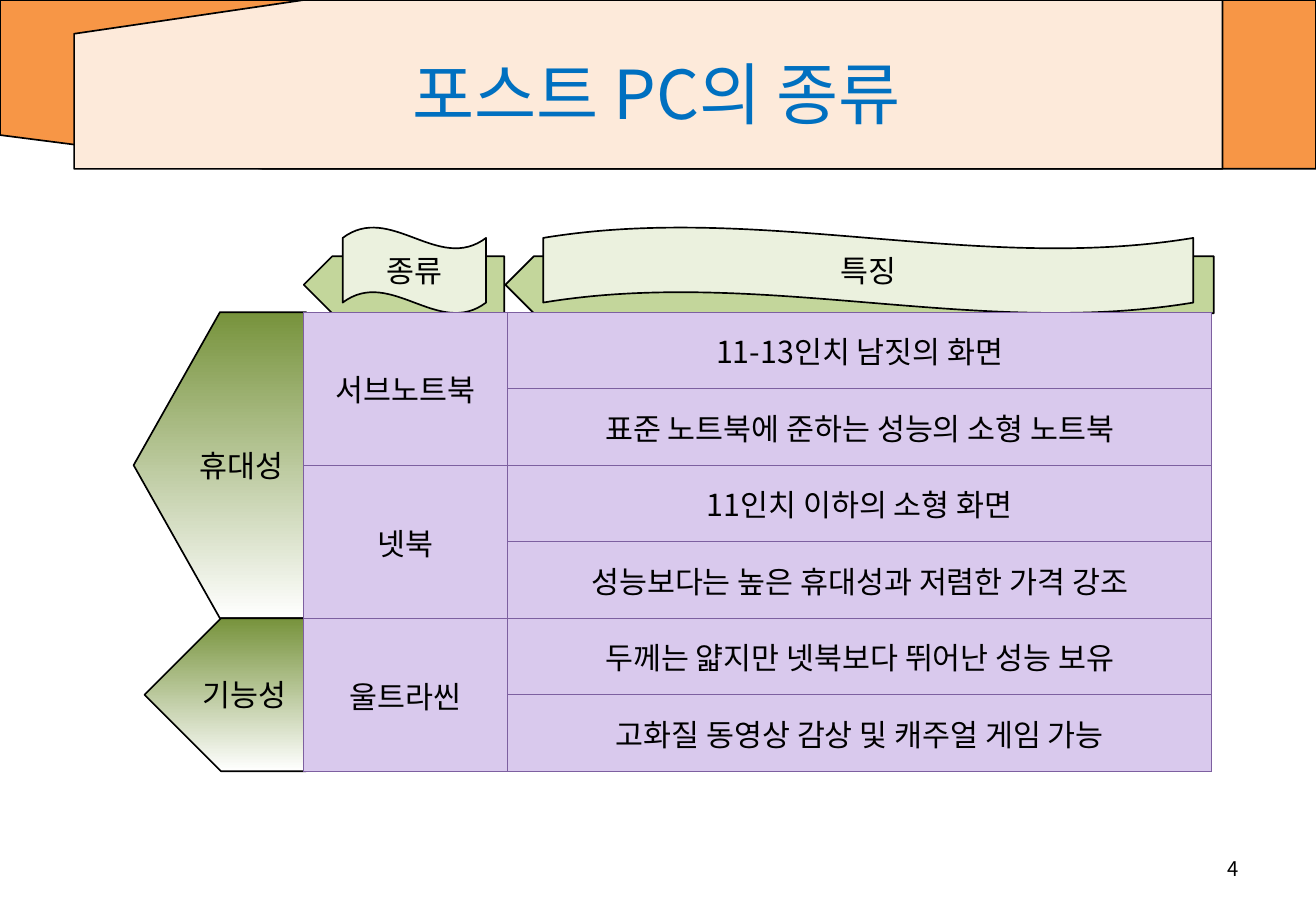
from lxml.etree import SubElement
from pptx import Presentation
from pptx.dml.color import RGBColor
from pptx.enum.shapes import MSO_SHAPE
from pptx.enum.text import MSO_ANCHOR, PP_ALIGN
from pptx.oxml.ns import qn
from pptx.util import Inches, Pt

FONT = "Noto Sans CJK KR"
ROW_HEIGHT = 0.63
TABLE_LEFT, TABLE_TOP = 2.5, 2.57
KINDS = [
    ("서브노트북", ["11-13인치 남짓의 화면", "표준 노트북에 준하는 성능의 소형 노트북"]),
    ("넷북", ["11인치 이하의 소형 화면", "성능보다는 높은 휴대성과 저렴한 가격 강조"]),
    ("울트라씬", ["두께는 얇지만 넷북보다 뛰어난 성능 보유", "고화질 동영상 감상 및 캐주얼 게임 가능"]),
]
HEADERS = [("종류", (2.5, 1.65), (2.82, 1.18)), ("특징", (4.16, 5.83), (4.47, 5.35))]
QUALITIES = [("휴대성", 1.1, 1.42, 0, 4), ("기능성", 1.19, 1.33, 4, 2)]


def color(hex_value):
    return RGBColor.from_string(hex_value)


class SlideBuilder:
    """Draws styled elements on the current slide."""

    def __init__(self, slide):
        self.slide = slide
        self.shapes = slide.shapes

    def put_text(self, frame, text, size=18, ink="000000", align=PP_ALIGN.CENTER):
        frame.word_wrap = True
        frame.vertical_anchor = MSO_ANCHOR.MIDDLE
        paragraph = frame.paragraphs[0]
        paragraph.alignment = align
        run = paragraph.add_run()
        run.text = text
        for key, value in {"name": FONT, "size": Pt(size), "bold": False}.items():
            setattr(run.font, key, value)
        run.font.color.rgb = color(ink)
        SubElement(run.font._element, qn("a:ea"), typeface=FONT)

    def title(self, text, box):
        title = self.shapes.title
        for key, value in zip(("left", "top", "width", "height"), box):
            setattr(title, key, Inches(value))
        self.put_text(title.text_frame, text, 40, "0070C0")
        self.shapes._spTree.append(title._element)

    def label(self, text, box, size, align):
        label = self.shapes.add_textbox(*map(Inches, box))
        self.put_text(label.text_frame, text, size, align=align)

    def shape(self, preset, box, fills, text=None, flip=None):
        shape = self.shapes.add_shape(preset, *map(Inches, box))
        shape.shadow.inherit = False
        if len(fills) == 1:
            shape.fill.solid()
            shape.fill.fore_color.rgb = color(fills[0])
        else:
            shape.fill.gradient()
            shape.fill.gradient_angle = 270
            for stop, fill in zip(shape.fill.gradient_stops, fills):
                stop.color.rgb = color(fill)
        shape.line.color.rgb = color("000000")
        shape.line.width = Pt(1)
        if flip:
            shape._element.spPr.find(qn("a:xfrm")).set(flip, "1")
        if text:
            self.put_text(shape.text_frame, text)

    def cell_style(self, cell, fill, border):
        properties = cell._tc.get_or_add_tcPr()
        for side in ("lnL", "lnR", "lnT", "lnB"):
            edge = SubElement(properties, qn(f"a:{side}"), w=str(Pt(0.75)))
            SubElement(SubElement(edge, qn("a:solidFill")), qn("a:srgbClr"), val=border)
        cell.fill.solid()
        cell.fill.fore_color.rgb = color(fill)

    def table(self, groups, left, top, widths, row_height):
        row_count = sum(len(features) for _, features in groups)
        table = self.shapes.add_table(
            row_count, len(widths), Inches(left), Inches(top),
            Inches(sum(widths)), Inches(row_height * row_count)).table
        table.first_row = table.horz_banding = False
        for column, width in zip(table.columns, widths):
            column.width = Inches(width)
        for cell in table.iter_cells():
            self.cell_style(cell, "D9C9ED", "7D60A0")
        row = 0
        for kind, features in groups:
            kind_cell = table.cell(row, 0)
            kind_cell.merge(table.cell(row + len(features) - 1, 0))
            self.cell_text(kind_cell, kind)
            for feature in features:
                self.cell_text(table.cell(row, 1), feature)
                row += 1

    def cell_text(self, cell, text):
        self.put_text(cell.text_frame, text)
        cell.vertical_anchor = MSO_ANCHOR.MIDDLE


def main():
    presentation = Presentation()
    presentation.slide_width = Inches(10.83)
    presentation.slide_height = Inches(7.5)
    builder = SlideBuilder(presentation.slides.add_slide(presentation.slide_layouts[5]))

    card = MSO_SHAPE.FLOWCHART_CARD
    builder.shape(card, (0, 0, 10.83, 1.39), ["F79646"], flip="flipV")
    builder.shape(card, (0.61, 0, 9.45, 1.39), ["FDEADA"])
    builder.title("포스트 PC의 종류", (0.53, 0.14, 9.75, 1.25))
    builder.label("4", (7.76, 6.95, 2.53, 0.4), 12, PP_ALIGN.RIGHT)

    for header, (arrow_left, arrow_width), (wave_left, wave_width) in HEADERS:
        builder.shape(MSO_SHAPE.PENTAGON, (arrow_left, 2.11, arrow_width, 0.47),
                      ["C3D69B"], flip="flipH")
        builder.shape(MSO_SHAPE.WAVE, (wave_left, 1.87, wave_width, 0.71),
                      ["EBF1DE"], header)
    for quality, left, width, first_row, rows in QUALITIES:
        box = (left, TABLE_TOP + first_row * ROW_HEIGHT, width, rows * ROW_HEIGHT)
        builder.shape(MSO_SHAPE.PENTAGON, box, ["77933C", "FFFFFF"], quality, "flipH")
    builder.table(KINDS, TABLE_LEFT, TABLE_TOP, (1.68, 5.79), ROW_HEIGHT)

    presentation.save("out.pptx")


if __name__ == "__main__":
    main()
